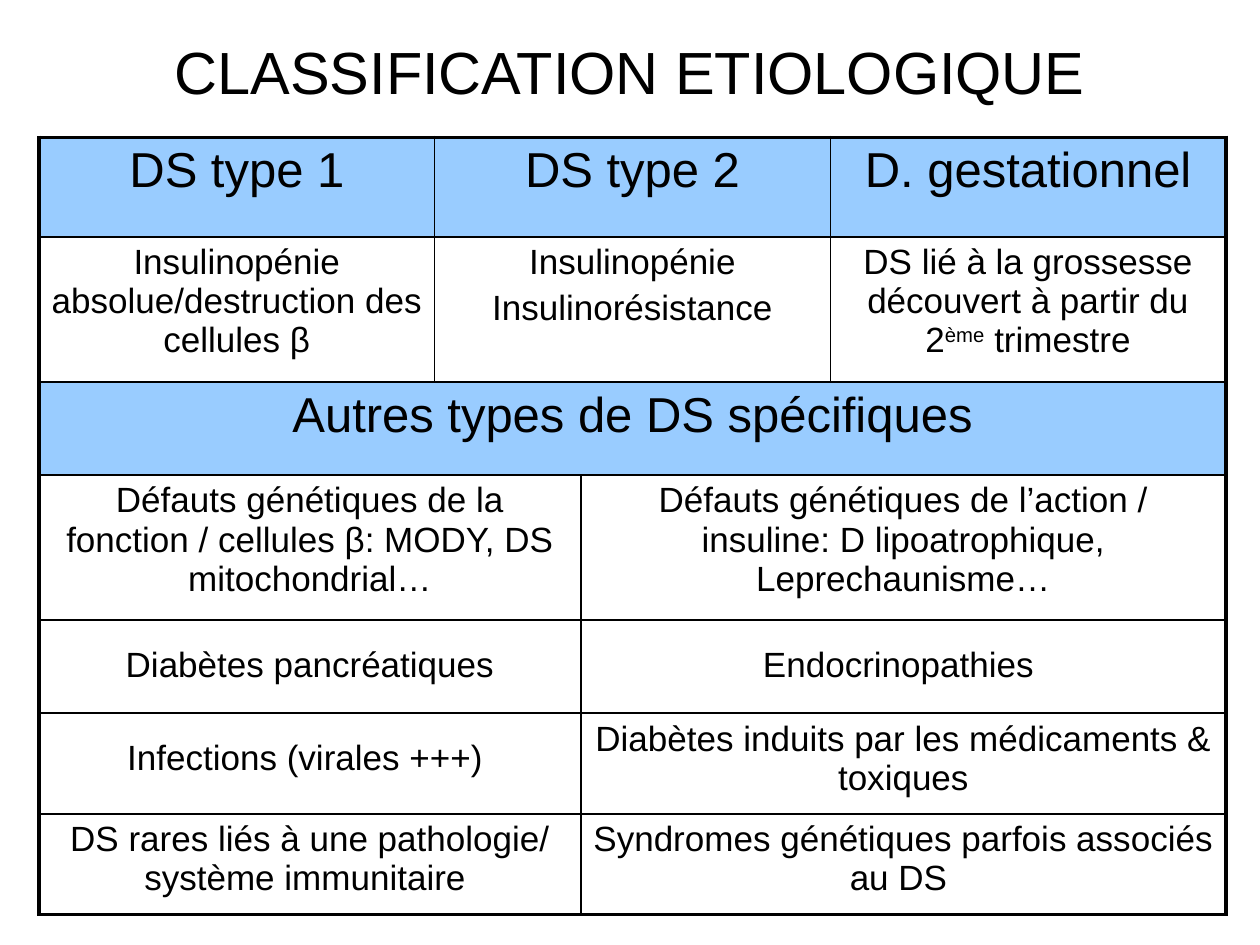
from dataclasses import dataclass

from lxml import etree
from pptx import Presentation
from pptx.dml.color import RGBColor
from pptx.enum.text import MSO_ANCHOR, PP_ALIGN
from pptx.oxml.ns import qn
from pptx.util import Inches, Pt

CENTER = PP_ALIGN.CENTER
MIDDLE = MSO_ANCHOR.MIDDLE


@dataclass(frozen=True)
class Theme:
    font: str = "Arial"
    ink: str = "000000"
    band: str = "99CCFF"
    title: int = 34
    head: int = 28
    body: int = 20
    thin: float = 1
    thick: float = 2.25


THEME = Theme()
WIDE, HIGH = 10, 7.5
COLS = [3.14, 1.16, 1.98, 3.14]
ROWS = [0.79, 1.15, 0.74, 1.15, 0.74, 0.8, 0.8]
THIRDS, WHOLE, HALVES = (1, 2, 1), (4,), (2, 2)
HEADS = {0, 2}
LOOSE = {(4, 0), (4, 2), (5, 0)}
SUPER = "ème"
GRID = [
    (THIRDS, [[["DS type 1"]], [["DS type 2"]], [["D. gestationnel"]]]),
    (THIRDS, [
        [["Insulinopénie absolue/destruction des cellules β"]],
        [["Insulinopénie"], ["Insulinorésistance"]],
        [["DS lié à la grossesse découvert à partir du 2", SUPER, " trimestre"]],
    ]),
    (WHOLE, [[["Autres types de DS spécifiques"]]]),
    (HALVES, [
        [["Défauts génétiques de la fonction / cellules β: MODY, DS mitochondrial…"]],
        [["Défauts génétiques de l’action / insuline: D lipoatrophique, Leprechaunisme…"]],
    ]),
    (HALVES, [[["Diabètes pancréatiques"]], [["Endocrinopathies "]]]),
    (HALVES, [
        [["Infections (virales +++) "]],
        [["Diabètes induits par les médicaments & toxiques"]],
    ]),
    (HALVES, [
        [["DS rares liés à une pathologie/ système immunitaire "]],
        [["Syndromes génétiques parfois associés au DS "]],
    ]),
]


def add_run(para, text, size):
    run = para.add_run()
    run.text = text
    run.font.name = THEME.font
    run.font.size = Pt(size)
    run.font.color.rgb = RGBColor.from_string(THEME.ink)
    return run


def add_title(slide):
    title = slide.shapes.title
    title.left, title.top = Inches(0.05 * WIDE), Inches(0.02 * HIGH)
    title.width, title.height = Inches(0.9 * WIDE), Inches(0.11 * HIGH)
    frame = title.text_frame
    frame.vertical_anchor = MIDDLE
    para = frame.paragraphs[0]
    para.alignment = CENTER
    add_run(para, "CLASSIFICATION ETIOLOGIQUE", THEME.title)


def fill_text(cell, paras, size, loose):
    frame = cell.text_frame
    for index, runs in enumerate(paras):
        para = frame.add_paragraph() if index else frame.paragraphs[0]
        para.alignment = CENTER
        para.space_before = Pt(0.2 * size)
        if loose:
            para.line_spacing = 1.5
        for text in runs:
            run = add_run(para, text, size)
            if text == SUPER:
                run.font._element.set("baseline", "30000")


def add_edge(cell, side, outer):
    width = Pt(THEME.thick if outer else THEME.thin)
    props = cell._tc.get_or_add_tcPr()
    line = etree.SubElement(props, qn(f"a:ln{side}"), w=str(int(width)))
    fill = etree.SubElement(line, qn("a:solidFill"))
    etree.SubElement(fill, qn("a:srgbClr"), val=THEME.ink)


def style_cell(cell, edges, band):
    for side, outer in edges.items():
        add_edge(cell, side, outer)
    if band:
        cell.fill.solid()
        cell.fill.fore_color.rgb = RGBColor.from_string(THEME.band)
    else:
        cell.fill.background()


def add_grid(slide):
    frame = slide.shapes.add_table(
        len(ROWS), len(COLS), Inches(0.31), Inches(1.09),
        Inches(sum(COLS)), Inches(sum(ROWS)))
    table = frame.table
    table.first_row = table.horz_banding = False
    for col, width in zip(table.columns, COLS):
        col.width = Inches(width)
    for row, height in zip(table.rows, ROWS):
        row.height = Inches(height)
    for row, (spans, texts) in enumerate(GRID):
        start = 0
        band = row in HEADS
        size = THEME.head if band else THEME.body
        for span, paras in zip(spans, texts):
            end = start + span
            edges = {"L": start == 0, "R": end == len(COLS),
                     "T": row == 0, "B": row == len(ROWS) - 1}
            for col in range(start, end):
                style_cell(table.cell(row, col), edges, band)
            cell = table.cell(row, start)
            if span > 1:
                cell.merge(table.cell(row, end - 1))
            fill_text(cell, paras, size, (row, start) in LOOSE)
            start = end


def main():
    deck = Presentation()
    deck.slide_width, deck.slide_height = Inches(WIDE), Inches(HIGH)
    slide = deck.slides.add_slide(deck.slide_layouts[5])
    add_title(slide)
    add_grid(slide)
    deck.save("out.pptx")


if __name__ == "__main__":
    main()
